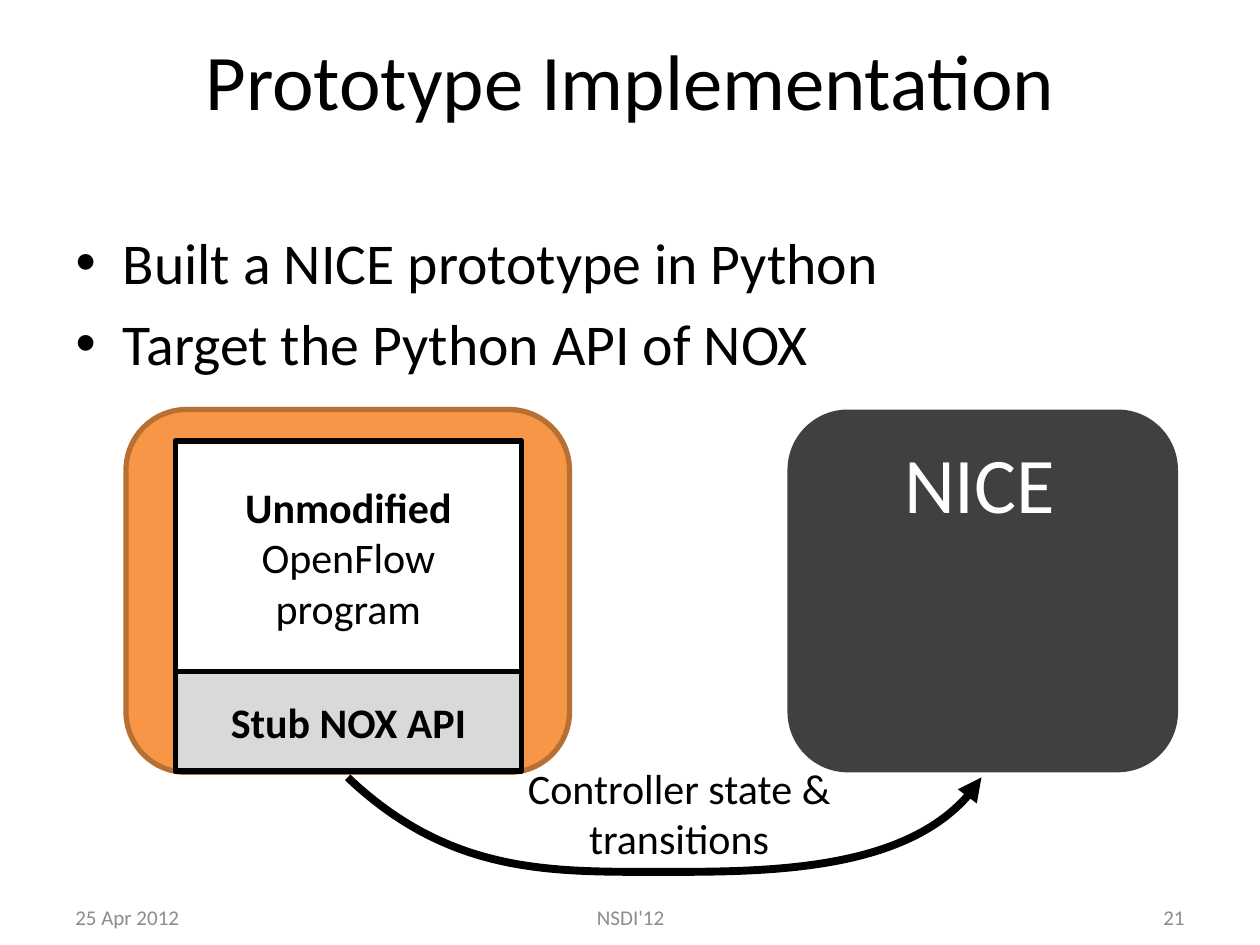
from pptx import Presentation
from pptx.dml.color import RGBColor
from pptx.enum import shapes, text
from pptx.oxml import ns, xmlchemy
from pptx.util import Inches, Pt

BLACK = RGBColor(0, 0, 0)
WHITE = RGBColor(255, 255, 255)
GRAY = RGBColor(0x8C, 0x8C, 0x8C)
LIGHT = RGBColor(0xD9, 0xD9, 0xD9)
DARK = RGBColor(0x40, 0x40, 0x40)
ORANGE = RGBColor(0xF7, 0x96, 0x46)
BROWN = RGBColor(0xB7, 0x6F, 0x34)
LEFT, MID, RIGHT = text.PP_ALIGN.LEFT, text.PP_ALIGN.CENTER, text.PP_ALIGN.RIGHT
ROUND, RECT = shapes.MSO_SHAPE.ROUNDED_RECTANGLE, shapes.MSO_SHAPE.RECTANGLE

# Content: a line break inside a paragraph is \v
TITLE = "Prototype Implementation"
POINTS = ["Built a NICE prototype in Python", "Target the Python API of NOX"]
FOOT = [("25 Apr 2012", 0.5, 2.33, LEFT), ("NSDI'12", 3.42, 3.17, MID),
        ("21", 7.17, 2.33, RIGHT)]
STACK = [  # kind, box, fill, line, text, number of bold runs
    (ROUND, (1, 3.25, 3.52, 2.88), ORANGE, BROWN, "", 0),
    (RECT, (1.39, 3.5, 2.75, 1.84), WHITE, BLACK, "Unmodified\vOpenFlow\vprogram", 1),
    (RECT, (1.39, 5.33, 2.75, 0.79), LIGHT, BLACK, "Stub NOX API", 1),
]
NICE = (6.25, 3.25, 3.1, 2.88)
# Start point, then two cubic curves of three points each
CURVE = [(2.76, 6.17), (3.55, 6.92), (4.33, 6.92), (5.17, 6.92),
         (6.01, 6.92), (7.31, 6.94), (7.79, 6.17)]


def place(shape, box):
    shape.left, shape.top, shape.width, shape.height = map(Inches, box)


def style(frame, size, color, align, bold=0):
    for para in frame.paragraphs:
        para.alignment = align
        for i, run in enumerate(para.runs):
            font = run.font
            font.name, font.size, font.bold = "Calibri", Pt(size), i < bold
            font.color.rgb = color


def add_box(parent, kind, box, fill, line):
    shape = parent.add_shape(kind, *map(Inches, box))
    shape.shadow.inherit = False
    shape.fill.solid()
    shape.fill.fore_color.rgb = fill
    if line is None:
        shape.line.fill.background()
    else:
        shape.line.color.rgb = line
        shape.line.width = Pt(3)
    return shape


def add_text(parent, words, box, size, color, align, wrap=False):
    frame = parent.add_textbox(*map(Inches, box)).text_frame
    frame.text = words
    frame.word_wrap = wrap
    style(frame, size, color, align)
    return frame


def add_curve(parent):
    pts = [(Inches(x), Inches(y)) for x, y in CURVE]
    pen = parent.build_freeform(*pts[0])
    pen.add_line_segments(pts[1:], close=False)
    shape = pen.convert_to_shape()
    shape.shadow.inherit = False
    shape.fill.background()
    shape.line.color.rgb = BLACK
    shape.line.width = Pt(4.5)
    # Turn each three line segments into one cubic curve
    segs = list(shape.element.iter(ns.qn("a:lnTo")))
    track = segs[0].getparent()
    for i in range(0, len(segs), 3):
        cubic = xmlchemy.OxmlElement("a:cubicBezTo")
        for seg in segs[i:i + 3]:
            cubic.append(seg[0])
            track.remove(seg)
        track.append(cubic)
    # Arrowhead
    tail = xmlchemy.OxmlElement("a:tailEnd")
    tail.set("type", "triangle")
    shape.line._get_or_add_ln().append(tail)


def main():
    deck = Presentation()
    deck.slide_width, deck.slide_height = Inches(10), Inches(7.5)
    slide = deck.slides.add_slide(deck.slide_layouts[1])
    parts = slide.shapes

    # Title and list
    title, body = slide.placeholders
    place(title, (0.5, 0, 9, 1.25))
    title.text_frame.text = TITLE
    style(title.text_frame, 45, BLACK, MID)
    place(body, (0.5, 1.75, 9.17, 5.17))
    body.text_frame.text = "\n".join(POINTS)
    style(body.text_frame, 33, BLACK, LEFT)
    for shape in (title, body):
        shape.text_frame.auto_size = text.MSO_AUTO_SIZE.NONE

    # Footer
    for words, left, width, align in FOOT:
        frame = add_text(parts, words, (left, 7.08, width, 0.4), 12, GRAY, align, True)
        frame.vertical_anchor = text.MSO_ANCHOR.MIDDLE

    # Controller stack
    group = parts.add_group_shape().shapes
    for kind, box, fill, line, words, bold in STACK:
        shape = add_box(group, kind, box, fill, line)
        if words:
            frame = shape.text_frame
            frame.text = words
            frame.vertical_anchor = text.MSO_ANCHOR.MIDDLE
            style(frame, 24, BLACK, MID, bold)

    # NICE block
    add_box(parts, ROUND, NICE, DARK, None)
    frame = add_text(parts, "NICE", (6.76, 3.25, 2.03, 1.17), 45, WHITE, MID)
    frame.margin_left = frame.margin_right = Inches(0.41)
    frame.margin_top = frame.margin_bottom = Inches(0.2)

    # Arrow and its label
    add_curve(parts)
    add_text(parts, "Controller state &\vtransitions", (4.08, 6, 2.62, 0.91), 24, BLACK, MID)
    deck.save("out.pptx")


if __name__ == "__main__":
    main()
